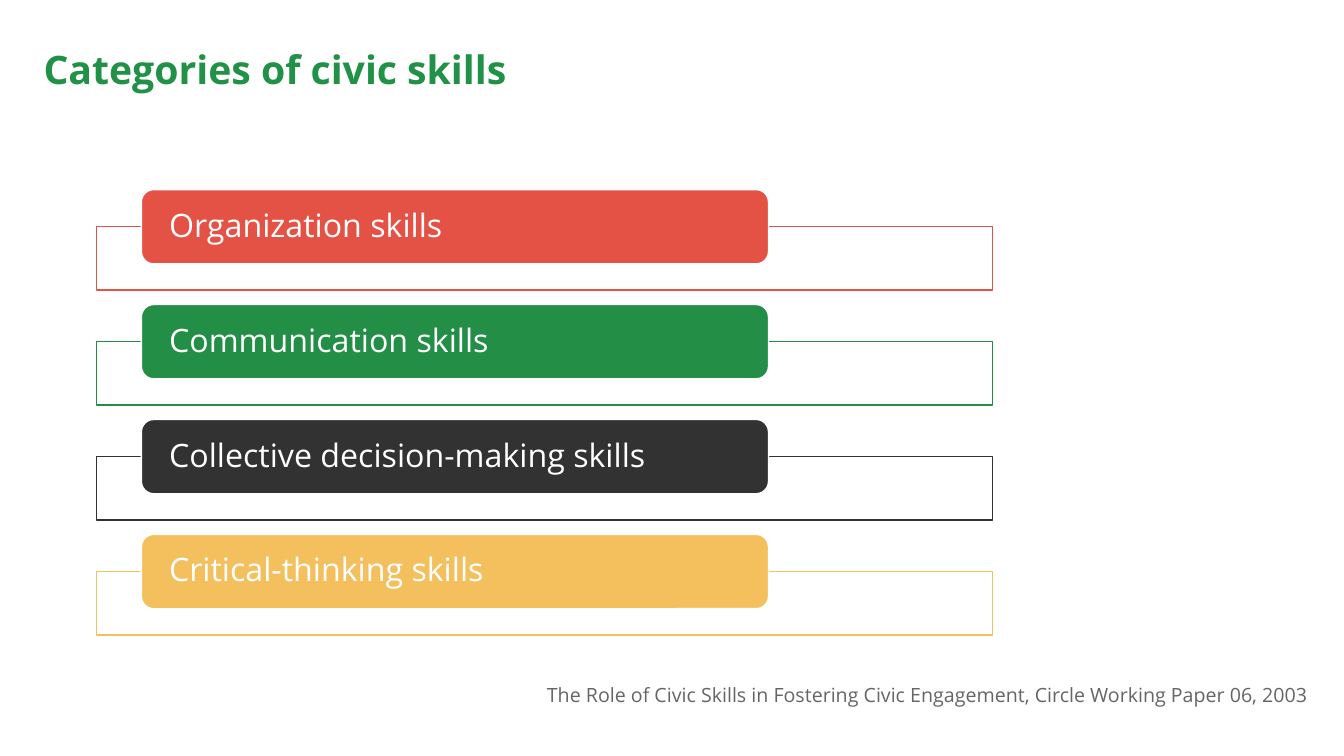
from dataclasses import dataclass

from lxml.etree import SubElement
from pptx import Presentation
from pptx.dml.color import RGBColor
from pptx.enum.shapes import MSO_SHAPE
from pptx.enum.text import MSO_ANCHOR, PP_ALIGN
from pptx.oxml.ns import qn
from pptx.util import Pt


@dataclass(frozen=True)
class Theme:
    font: str = "Open Sans"
    title_size: float = 28
    label_size: float = 23
    source_size: float = 14
    title: str = "209146"
    source: str = "656565"
    white: str = "FFFFFF"
    red: str = "E45246"
    green: str = "238E46"
    dark: str = "323232"
    yellow: str = "F4C05E"


THEME = Theme()
SKILLS = [
    ("Organization skills", THEME.red),
    ("Communication skills", THEME.green),
    ("Collective decision-making skills", THEME.dark),
    ("Critical-thinking skills", THEME.yellow),
]
FIRST_LABEL_TOP = 135.4
ROW_PITCH = 82.1
FRAME_DROP = 26.5


def write_text(shape, text, size, color, insets, bold=False,
               align=PP_ALIGN.LEFT, anchor=MSO_ANCHOR.MIDDLE, line_spacing=None):
    """Fill a shape with one styled paragraph; insets are (horizontal, vertical)."""
    frame = shape.text_frame
    frame.word_wrap = True
    frame.vertical_anchor = anchor
    frame.margin_left = frame.margin_right = Pt(insets[0])
    frame.margin_top = frame.margin_bottom = Pt(insets[1])
    frame.text = text
    para = frame.paragraphs[0]
    para.alignment = align
    para.line_spacing = line_spacing
    font = para.runs[0].font
    font.name = THEME.font
    font.size = Pt(size)
    font.bold = bold
    font.color.rgb = RGBColor.from_string(color)


def add_text_box(slide, left, top, width, height):
    return slide.shapes.add_textbox(Pt(left), Pt(top), Pt(width), Pt(height))


def add_panel(slide, kind, left, top, width, height, fill, line):
    panel = slide.shapes.add_shape(kind, Pt(left), Pt(top), Pt(width), Pt(height))
    panel.shadow.inherit = False
    panel.fill.solid()
    panel.fill.fore_color.rgb = RGBColor.from_string(fill)
    panel.line.color.rgb = RGBColor.from_string(line)
    panel.line.width = Pt(1)
    return panel


def set_opacity(shape, percent):
    color = shape.fill._xPr.find(qn("a:solidFill"))[0]
    SubElement(color, qn("a:alpha"), val=str(percent * 1000))


def add_skill(slide, top, text, color):
    """Draw an outlined frame with a coloured label over its top edge."""
    frame = add_panel(slide, MSO_SHAPE.RECTANGLE, 69, top + FRAME_DROP, 640, 45.4,
                      THEME.white, color)
    set_opacity(frame, 90)
    label = add_panel(slide, MSO_SHAPE.ROUNDED_RECTANGLE, 101, top, 448, 53.1,
                      color, THEME.white)
    write_text(label, text, THEME.label_size, THEME.white, (17.2, 0), line_spacing=0.9)


def main():
    deck = Presentation()
    deck.slide_width, deck.slide_height = Pt(960), Pt(540)
    slide = deck.slides.add_slide(deck.slide_layouts[6])

    title = add_text_box(slide, 26.6, 23, 907, 56.2)
    write_text(title, "Categories of civic skills", THEME.title_size, THEME.title,
               (4.5, 4.5), bold=True, line_spacing=0.9)

    for row, (text, color) in enumerate(SKILLS):
        add_skill(slide, FIRST_LABEL_TOP + row * ROW_PITCH, text, color)

    source = add_text_box(slide, 198, 484, 743.6, 24.2)
    write_text(source,
               "The Role of Civic Skills in Fostering Civic Engagement, "
               "Circle Working Paper 06, 2003",
               THEME.source_size, THEME.source, (7.2, 3.6),
               align=PP_ALIGN.RIGHT, anchor=MSO_ANCHOR.TOP)

    deck.save("out.pptx")


if __name__ == "__main__":
    main()
